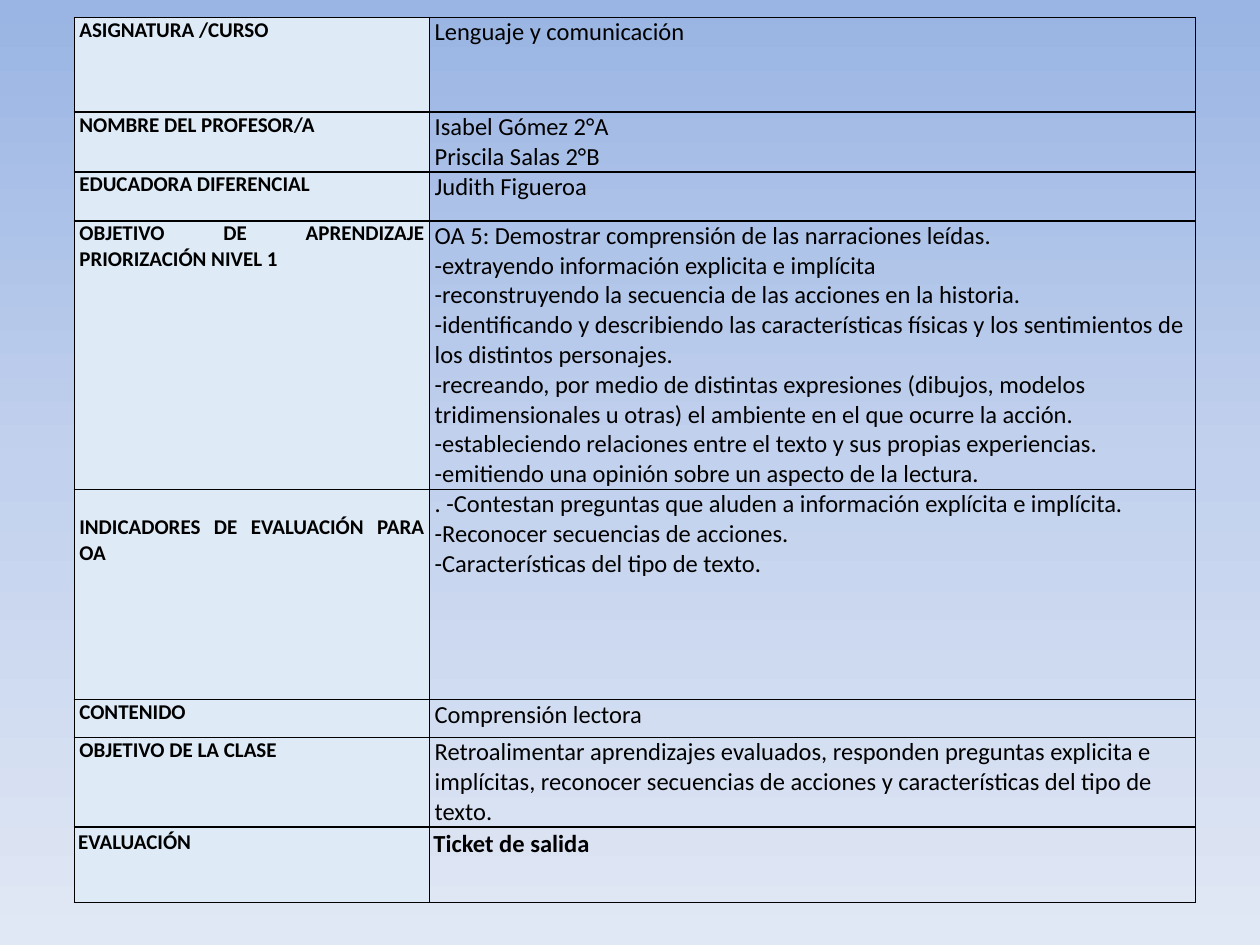
import copy

import pptx
import pptx.dml.color
import pptx.enum.text
import pptx.oxml
import pptx.oxml.ns
import pptx.util

Inches = pptx.util.Inches
Pt = pptx.util.Pt
ALIGN = pptx.enum.text.PP_ALIGN


def rgb(color):
    return pptx.dml.color.RGBColor.from_string(color)


def add_borders(cell):
    """Put a 1 pt black line on all four sides; call before setting the fill."""
    for side in ("lnL", "lnR", "lnT", "lnB"):
        cell._tc.get_or_add_tcPr().append(pptx.oxml.parse_xml(
            f'<a:{side} {pptx.oxml.ns.nsdecls("a")} w="{Pt(1)}">'
            f'<a:solidFill><a:srgbClr val="000000"/></a:solidFill></a:{side}>'))


# Label, paragraphs, row height, alignment of the paragraphs
ROWS = [
    ("ASIGNATURA /CURSO", ["Lenguaje y comunicación"], 0.75, ALIGN.JUSTIFY),
    ("NOMBRE DEL PROFESOR/A", ["Isabel Gómez 2°A", "Priscila Salas 2°B"], 0.45, ALIGN.JUSTIFY),
    ("EDUCADORA DIFERENCIAL", ["Judith Figueroa"], 0.39, ALIGN.JUSTIFY),
    ("OBJETIVO DE APRENDIZAJE PRIORIZACIÓN NIVEL 1", [
        "OA 5: Demostrar comprensión de las narraciones leídas.",
        "-extrayendo información explicita e implícita",
        "-reconstruyendo la secuencia de las acciones en la historia.",
        "-identificando y describiendo las características físicas y los sentimientos de "
        "los distintos personajes.",
        "-recreando, por medio de distintas expresiones (dibujos, modelos "
        "tridimensionales u otras) el ambiente en el que ocurre la acción.",
        "-estableciendo relaciones entre el texto y sus propias experiencias.",
        "-emitiendo una opinión sobre un aspecto de la lectura.",
    ], 2.01, ALIGN.LEFT),
    ("INDICADORES DE EVALUACIÓN PARA OA", [
        ". -Contestan preguntas que aluden a información explícita e implícita.",
        "-Reconocer secuencias de acciones.",
        "-Características del tipo de texto.",
    ], 1.67, ALIGN.LEFT),
    ("CONTENIDO", ["Comprensión lectora"], 0.3, ALIGN.JUSTIFY),
    ("OBJETIVO DE LA CLASE", [
        "Retroalimentar aprendizajes evaluados, responden preguntas explicita e "
        "implícitas, reconocer secuencias de acciones y características del tipo de texto.",
    ], 0.6, ALIGN.LEFT),
    ("EVALUACIÓN", ["Ticket de salida"], 0.6, ALIGN.JUSTIFY),
]
INDICATORS_ROW = 4
LAST_ROW = len(ROWS) - 1

prs = pptx.Presentation()
prs.slide_width = Inches(10)
prs.slide_height = Inches(7.5)
s = prs.slides.add_slide(prs.slide_layouts[6])

# Background fading from top to bottom through three blues
fill = s.background.fill
fill.gradient()
fill.gradient_angle = 270
stop_list = s.element.find(".//" + pptx.oxml.ns.qn("a:gsLst"))
stop_list.insert(1, copy.deepcopy(stop_list[0]))
for stop, position, color in zip(fill.gradient_stops, (0, 0.5, 1), ("9AB5E4", "C2D1ED", "E1E8F5")):
    stop.position = position
    stop.color.rgb = rgb(color)

height = sum(row[2] for row in ROWS)
table = s.shapes.add_table(len(ROWS), 2, Inches(0.59), Inches(0.14),
                           Inches(8.9), Inches(height)).table
table.first_row = False
table.horz_banding = False
table.columns[0].width = Inches(2.82)
table.columns[1].width = Inches(6.08)

for i, (label, lines, row_height, align) in enumerate(ROWS):
    table.rows[i].height = Inches(row_height)
    for j, texts in enumerate(([label], lines)):
        is_label = j == 0
        cell = table.cell(i, j)
        add_borders(cell)
        if is_label:
            cell.fill.solid()
            cell.fill.fore_color.rgb = rgb("DEEAF6")
        else:
            cell.fill.background()
        cell.margin_left = cell.margin_right = Inches(0.03 if i == LAST_ROW else 0.04)
        cell.margin_top = cell.margin_bottom = Inches(0.02 if i == LAST_ROW else 0)
        if is_label and i == INDICATORS_ROW:
            cell.margin_top = Inches(0.2)
        tf = cell.text_frame
        tf.text = "\n".join(texts)
        for p in tf.paragraphs:
            p.alignment = ALIGN.JUSTIFY if is_label else align
            p.font.name = "Calibri"
            p.font.size = Pt(12 if is_label else 14)
            p.font.bold = is_label or i == LAST_ROW
            p.font.color.rgb = rgb("000000")

prs.save("out.pptx")
